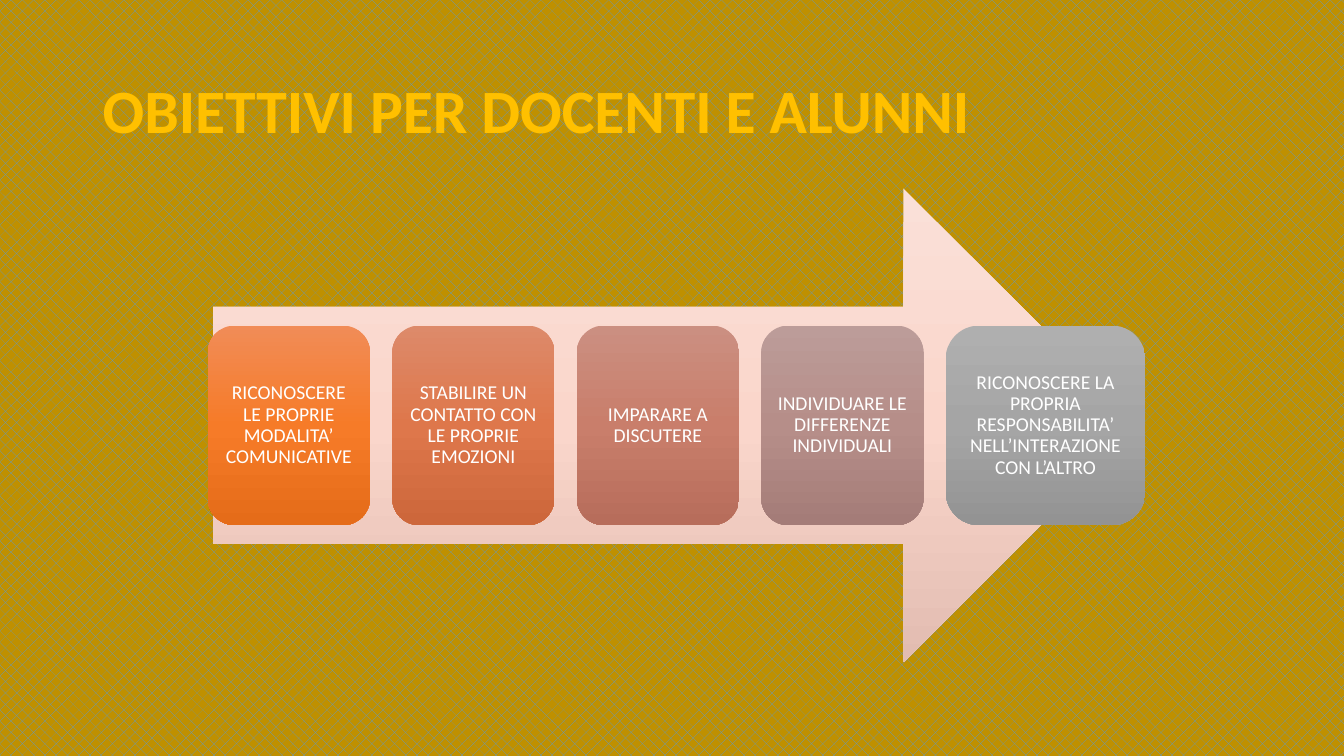
"""Build the slide of goals for teachers and pupils."""
from copy import deepcopy

from pptx import Presentation
from pptx.dml.color import RGBColor
from pptx.enum.dml import MSO_PATTERN
from pptx.enum.shapes import MSO_SHAPE
from pptx.enum.text import MSO_ANCHOR, PP_ALIGN
from pptx.oxml.ns import qn
from pptx.util import Inches, Pt

ARROW = MSO_SHAPE.RIGHT_ARROW
ROUND = MSO_SHAPE.ROUNDED_RECTANGLE
DOTS = MSO_PATTERN.PERCENT_25
MIDDLE = MSO_ANCHOR.MIDDLE
LEFT, CENTER = PP_ALIGN.LEFT, PP_ALIGN.CENTER

FONT = "Calibri"
BLUE = RGBColor(0x5B, 0x9B, 0xD5)
OCHRE = RGBColor(0xBF, 0x90, 0x00)
GOLD = RGBColor(0xFF, 0xC0, 0x00)
WHITE = RGBColor(0xFF, 0xFF, 0xFF)
PINKS = [RGBColor(0xFA, 0xE0, 0xD8), RGBColor(0xFA, 0xD6, 0xCB), RGBColor(0xE2, 0xBC, 0xB1)]
ORANGES = [RGBColor(0xF1, 0x8C, 0x57), RGBColor(0xF6, 0x7B, 0x28), RGBColor(0xE5, 0x6C, 0x19)]
RUSTS = [RGBColor(0xDD, 0x8A, 0x6A), RGBColor(0xDE, 0x77, 0x4B), RGBColor(0xCD, 0x67, 0x3B)]
CLAYS = [RGBColor(0xCB, 0x8F, 0x81), RGBColor(0xC9, 0x7E, 0x6B), RGBColor(0xB7, 0x6D, 0x5B)]
MAUVES = [RGBColor(0xBC, 0x9C, 0x99), RGBColor(0xB6, 0x8E, 0x89), RGBColor(0xA4, 0x7C, 0x78)]
GREYS = [RGBColor(0xAF, 0xAF, 0xAF), RGBColor(0xA5, 0xA5, 0xA5), RGBColor(0x93, 0x93, 0x93)]

GOALS = [
    ("RICONOSCERE LE PROPRIE MODALITA’ COMUNICATIVE", 1.61, ORANGES),
    ("STABILIRE UN CONTATTO CON LE PROPRIE EMOZIONI", 1.61, RUSTS),
    ("IMPARARE A DISCUTERE", 1.61, CLAYS),
    ("INDIVIDUARE LE DIFFERENZE INDIVIDUALI", 1.61, MAUVES),
    ("RICONOSCERE LA PROPRIA RESPONSABILITA’ NELL’INTERAZIONE CON L’ALTRO", 1.98, GREYS),
]


def add_block(kind, left, top, width, height, shades):
    block = slide.shapes.add_shape(
        kind, Inches(left), Inches(top), Inches(width), Inches(height))
    block.shadow.inherit = False
    block.line.fill.background()
    block.fill.gradient()
    block.fill.gradient_angle = 270
    stops = block._element.spPr.find(qn("a:gradFill")).find(qn("a:gsLst"))
    stops.insert(1, deepcopy(stops[0]))
    for stop, place, shade in zip(block.fill.gradient_stops, (0, 0.5, 1), shades):
        stop.position = place
        stop.color.rgb = shade
    return block


def set_text(frame, text, size, color, align, bold=False):
    frame.text = text
    frame.word_wrap = True
    frame.vertical_anchor = MIDDLE
    para = frame.paragraphs[0]
    para.alignment = align
    para.line_spacing = 0.9
    font = para.runs[0].font
    font.name, font.size, font.bold = FONT, Pt(size), bold
    font.color.rgb = color


deck = Presentation()
deck.slide_width, deck.slide_height = Inches(13.33), Inches(7.5)
slide = deck.slides.add_slide(deck.slide_layouts[6])

ground = slide.background.fill
ground.patterned()
ground.pattern = DOTS
ground.fore_color.rgb = BLUE
ground.back_color.rgb = OCHRE

title = slide.shapes.add_textbox(Inches(0.92), Inches(0.4), Inches(11.5), Inches(1.45))
set_text(title.text_frame, "OBIETTIVI PER DOCENTI E ALUNNI", 44, GOLD, LEFT, True)

add_block(ARROW, 2.11, 1.87, 9.2, 4.7, PINKS)

for i, (goal, width, shades) in enumerate(GOALS):
    card = add_block(ROUND, 2.06 + 1.83 * i, 3.23, width, 1.98, shades)
    frame = card.text_frame
    frame.margin_left = frame.margin_right = Inches(0.06)
    frame.margin_top = frame.margin_bottom = Inches(0.06)
    set_text(frame, goal, 14, WHITE, CENTER)

deck.save("out.pptx")
